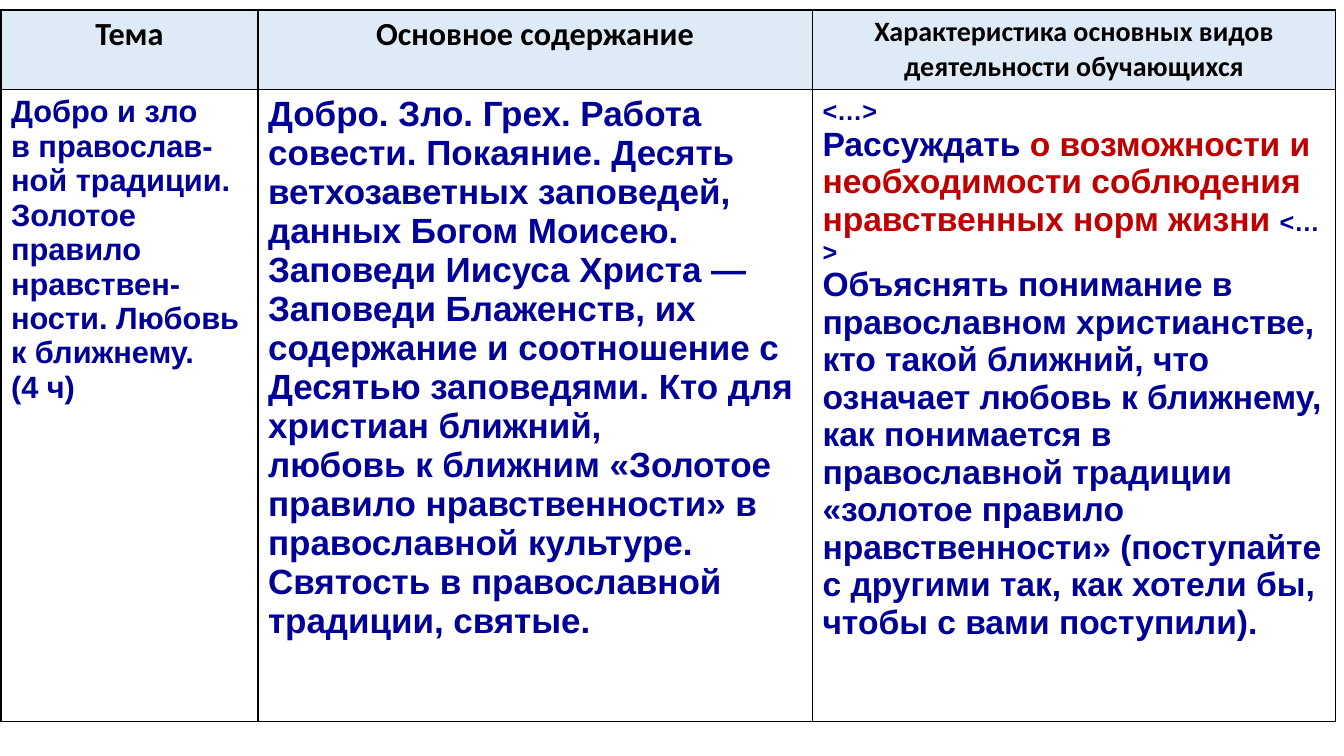
import pptx
import pptx.dml.color
import pptx.enum.text
import pptx.oxml.ns
import pptx.util
from lxml import etree

Pt = pptx.util.Pt
RGBColor = pptx.dml.color.RGBColor
qn = pptx.oxml.ns.qn

BLACK = RGBColor(0x00, 0x00, 0x00)
WHITE = RGBColor(0xFF, 0xFF, 0xFF)
NAVY = RGBColor(0x00, 0x00, 0x99)
RED = RGBColor(0xC0, 0x00, 0x00)
PALE_BLUE = RGBColor(0xDE, 0xEB, 0xF7)

COLUMN_WIDTHS = (183.6, 396, 373.7)
ROW_HEIGHTS = (57, 451)

HEADINGS = (
    ("Тема", 23),
    ("Основное содержание", 23),
    ("Характеристика основных видов деятельности обучающихся", 20),
)

# Each paragraph is a list of runs: text, size, colour.
TOPIC = [
    [(line, 22, NAVY)] for line in (
        "Добро и зло",
        "в православ-ной традиции. Золотое правило нравствен- ности. Любовь",
        "к ближнему.",
        "(4 ч)",
    )
]
CONTENT = [
    [(line, 25, NAVY)] for line in (
        "Добро. Зло. Грех. Работа совести. Покаяние. Десять ветхозаветных "
        "заповедей, данных Богом Моисею. Заповеди Иисуса Христа — Заповеди "
        "Блаженств, их содержание и соотношение с Десятью заповедями. "
        "Кто для христиан ближний,",
        "любовь к ближним «Золотое правило нравственности» в православной "
        "культуре. Святость в православной традиции, святые.",
    )
]
ACTIVITIES = [
    [("<…>", 18, NAVY)],
    [
        ("Рассуждать ", 24, NAVY),
        ("о возможности и необходимости соблюдения нравственных норм жизни ",
         24, RED),
        ("<…>", 18, NAVY),
    ],
    [("Объяснять понимание в православном христианстве, кто такой ближний, "
      "что означает любовь к ближнему, как понимается в православной традиции "
      "«золотое правило нравственности» (поступайте с другими так, как хотели "
      "бы, чтобы с вами поступили).", 24, NAVY)],
]


class CurriculumSlide:
    def __init__(self, presentation):
        self.slide = presentation.slides.add_slide(presentation.slide_layouts[6])
        self.heading_font = "Calibri"
        self.body_font = "Arial"
        self.border_width = 1

    def table(self, left, top, widths, heights):
        grid = self.slide.shapes.add_table(
            len(heights), len(widths), Pt(left), Pt(top),
            Pt(sum(widths)), Pt(sum(heights))).table
        for column, width in zip(grid.columns, widths):
            column.width = Pt(width)
        for row, height in zip(grid.rows, heights):
            row.height = Pt(height)
        return grid

    def borders(self, cell):
        properties = cell._tc.get_or_add_tcPr()
        for side in ("a:lnL", "a:lnR", "a:lnT", "a:lnB"):
            line = etree.SubElement(properties, qn(side),
                                    w=str(Pt(self.border_width)))
            fill = etree.SubElement(line, qn("a:solidFill"))
            etree.SubElement(fill, qn("a:srgbClr"), val=str(BLACK))

    def fill(self, cell, color, opacity=100):
        cell.fill.solid()
        cell.fill.fore_color.rgb = color
        if opacity < 100:
            tone = cell._tc.tcPr.find(qn("a:solidFill")).find(qn("a:srgbClr"))
            etree.SubElement(tone, qn("a:alpha"), val=str(opacity * 1000))

    def text(self, cell, paragraphs, font, align):
        frame = cell.text_frame
        for index, runs in enumerate(paragraphs):
            paragraph = frame.add_paragraph() if index else frame.paragraphs[0]
            paragraph.alignment = align
            for words, size, color in runs:
                run = paragraph.add_run()
                run.text = words
                run.font.name = font
                run.font.size = Pt(size)
                run.font.bold = True
                run.font.color.rgb = color

    def heading(self, cell, words, size):
        self.borders(cell)
        self.fill(cell, PALE_BLUE)
        self.text(cell, [[(words, size, BLACK)]], self.heading_font,
                  pptx.enum.text.PP_ALIGN.CENTER)

    def body(self, cell, paragraphs):
        self.borders(cell)
        self.fill(cell, WHITE, opacity=20)
        self.text(cell, paragraphs, self.body_font,
                  pptx.enum.text.PP_ALIGN.LEFT)


def main():
    presentation = pptx.Presentation()
    presentation.slide_width = Pt(960)
    presentation.slide_height = Pt(540)

    page = CurriculumSlide(presentation)
    curriculum = page.table(0.7, 7.2, COLUMN_WIDTHS, ROW_HEIGHTS)
    for column, (words, size) in enumerate(HEADINGS):
        page.heading(curriculum.cell(0, column), words, size)
    for column, paragraphs in enumerate((TOPIC, CONTENT, ACTIVITIES)):
        page.body(curriculum.cell(1, column), paragraphs)
    curriculum.cell(1, 2).text_frame.paragraphs[0].line_spacing = 1.1

    presentation.save("out.pptx")


if __name__ == "__main__":
    main()
